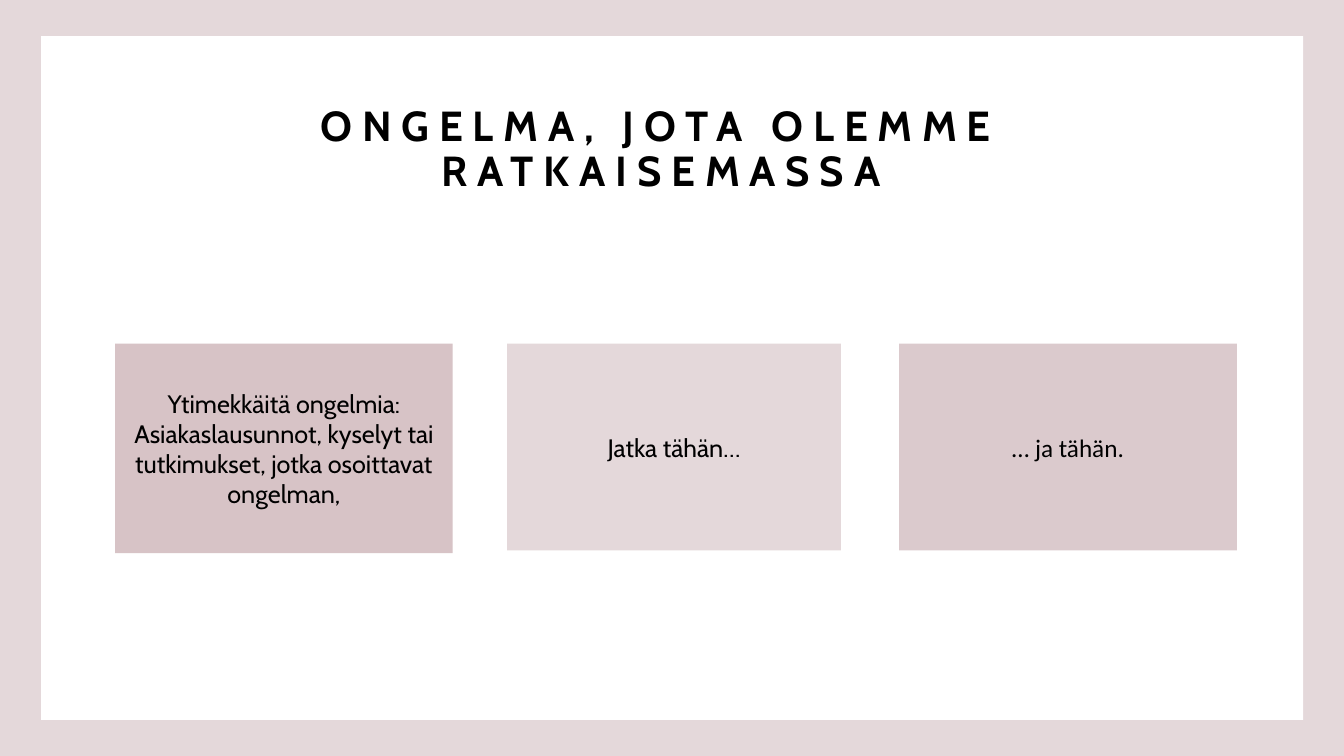
"""Build the slide that states the problem in three cards."""
import pptx
import pptx.dml.color
import pptx.enum.shapes
import pptx.enum.text
import pptx.util

Cm = pptx.util.Cm

TITLE = "ONGELMA, JOTA OLEMME RATKAISEMASSA"
PROBLEMS = [
    {"text": "Ytimekkäitä ongelmia: Asiakaslausunnot, kyselyt tai tutkimukset, jotka osoittavat ongelman,",
     "fill": "D7C3C6", "font": "Cabin", "width": 8.51, "height": 5.28},
    {"text": "Jatka tähän…",
     "fill": "E4D8DA", "font": "Cabin", "width": 8.41, "height": 5.21},
    {"text": "… ja tähän.",
     "fill": "DBCACD", "font": "Calibri", "width": 8.51, "height": 5.21},
]
THEME = {"background": "E4D8DA", "panel": "FFFFFF", "ink": "000000",
         "font": "Cabin", "title_size": 30, "body_size": 18}
CARD_LEFT, CARD_TOP, CARD_PITCH = 2.9, 8.66, 9.88


def rgb(code):
    """Turn a hex code into a colour."""
    return pptx.dml.color.RGBColor.from_string(code)


def add_box(slide, left, top, width, height, fill):
    """Add a flat rectangle measured in centimetres."""
    box = slide.shapes.add_shape(pptx.enum.shapes.MSO_SHAPE.RECTANGLE,
                                 Cm(left), Cm(top), Cm(width), Cm(height))
    box.fill.solid()
    box.fill.fore_color.rgb = rgb(fill)
    box.line.fill.background()
    box.shadow.inherit = False
    return box


def write(shape, text, size, font=THEME["font"], bold=False, tracking=0, leading=1.0, inset=0.0):
    """Set centred text in a shape."""
    frame = shape.text_frame
    frame.word_wrap = True
    frame.vertical_anchor = pptx.enum.text.MSO_ANCHOR.MIDDLE
    frame.margin_left = frame.margin_right = Cm(inset)
    frame.margin_top = frame.margin_bottom = Cm(inset)
    paragraph = frame.paragraphs[0]
    paragraph.alignment = pptx.enum.text.PP_ALIGN.CENTER
    paragraph.line_spacing = leading
    run = paragraph.add_run()
    run.text = text
    run.font.name = font
    run.font.size = pptx.util.Pt(size)
    run.font.bold = bold
    run.font.color.rgb = rgb(THEME["ink"])
    if tracking:
        run.font._element.set("spc", str(tracking * 100))


def main():
    """Lay out the slide and save it."""
    deck = pptx.Presentation()
    deck.slide_width, deck.slide_height = Cm(33.87), Cm(19.05)
    slide = deck.slides.add_slide(deck.slide_layouts[6])
    slide.background.fill.solid()
    slide.background.fill.fore_color.rgb = rgb(THEME["background"])

    add_box(slide, 1.04, 0.91, 31.8, 17.23, THEME["panel"])
    title = slide.shapes.add_textbox(Cm(3.96), Cm(2.21), Cm(25.4), Cm(3.15))
    write(title, TITLE, THEME["title_size"], bold=True, tracking=7, leading=0.9)

    for column, problem in enumerate(PROBLEMS):
        card = add_box(slide, CARD_LEFT + column * CARD_PITCH, CARD_TOP,
                       problem["width"], problem["height"], problem["fill"])
        write(card, problem["text"], THEME["body_size"], font=problem["font"], inset=0.25)

    deck.save("out.pptx")


if __name__ == "__main__":
    main()
